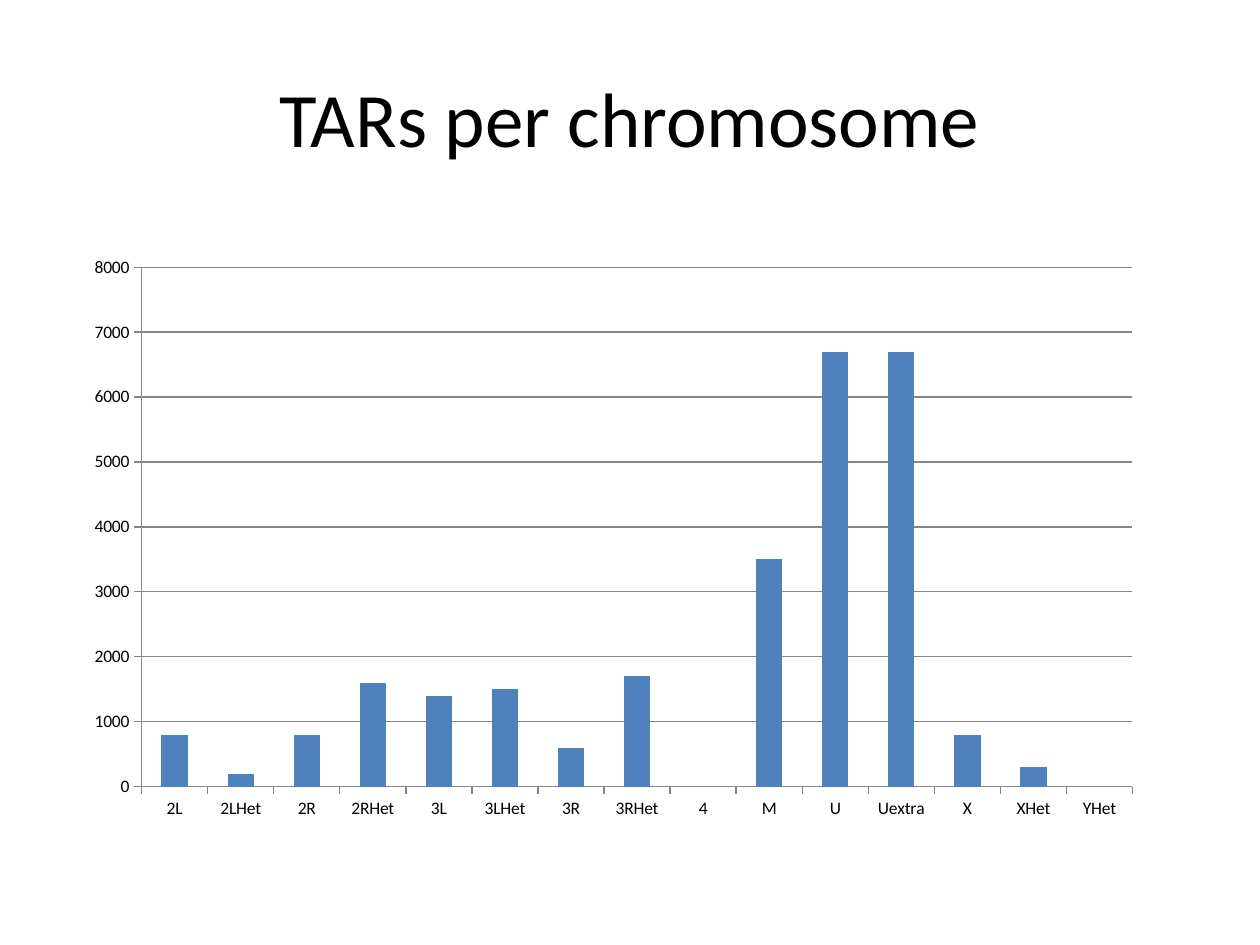
from pptx import Presentation
from pptx.chart.data import CategoryChartData
from pptx.dml.color import RGBColor
from pptx.enum.chart import XL_CHART_TYPE, XL_TICK_MARK
from pptx.enum.text import MSO_ANCHOR, PP_ALIGN
from pptx.util import Inches, Pt

COLUMNS = XL_CHART_TYPE.COLUMN_CLUSTERED
TICK_OUT = XL_TICK_MARK.OUTSIDE
TICK_NONE = XL_TICK_MARK.NONE
MIDDLE = MSO_ANCHOR.MIDDLE
CENTER = PP_ALIGN.CENTER

COLORS = {"text": "000000", "bar": "4F81BD", "axis": "868686"}

TARS = {
    "2L": 800, "2LHet": 200, "2R": 800, "2RHet": 1600, "3L": 1400,
    "3LHet": 1500, "3R": 600, "3RHet": 1700, "4": 0, "M": 3500,
    "U": 6700, "Uextra": 6700, "X": 800, "XHet": 300, "YHet": 0,
}


def set_all(target, values):
    for name, value in values.items():
        setattr(target, name, value)


class SlideBuilder:
    """Holds the style and the current slide."""

    font_name = "Calibri"

    def __init__(self, page):
        self.page = page

    def color(self, name):
        return RGBColor.from_string(COLORS[name])

    def style_font(self, font, size):
        set_all(font, {"name": self.font_name, "size": Pt(size), "bold": False})
        font.color.rgb = self.color("text")

    def style_line(self, line):
        line.color.rgb = self.color("axis")
        line.width = Pt(0.75)

    def title(self, text, left, top, width, height):
        box = self.page.shapes.add_textbox(
            Inches(left), Inches(top), Inches(width), Inches(height))
        frame = box.text_frame
        set_all(frame, {"word_wrap": True, "vertical_anchor": MIDDLE})
        para = frame.paragraphs[0]
        para.alignment = CENTER
        span = para.add_run()
        span.text = text
        self.style_font(span.font, 44)

    def column_chart(self, name, values, left, top, width, height):
        data = CategoryChartData()
        data.categories = list(values)
        data.add_series(name, list(values.values()))
        chart = self.page.shapes.add_chart(
            COLUMNS, Inches(left), Inches(top), Inches(width), Inches(height),
            data).chart
        set_all(chart, {"has_legend": False, "has_title": False})
        self.style_font(chart.font, 10)

        # Bars
        plot = chart.plots[0]
        set_all(plot, {"gap_width": 150, "vary_by_categories": False})
        fill = plot.series[0].format.fill
        fill.solid()
        fill.fore_color.rgb = self.color("bar")

        # Axes and gridlines
        for axis in (chart.category_axis, chart.value_axis):
            set_all(axis, {"major_tick_mark": TICK_OUT, "minor_tick_mark": TICK_NONE})
            self.style_line(axis.format.line)
        scale = chart.value_axis
        set_all(scale, {"minimum_scale": 0, "maximum_scale": 8000,
                        "major_unit": 1000, "has_major_gridlines": True})
        self.style_line(scale.major_gridlines.format.line)


def main():
    deck = Presentation()
    set_all(deck, {"slide_width": Inches(10), "slide_height": Inches(7.5)})
    builder = SlideBuilder(deck.slides.add_slide(deck.slide_layouts[6]))

    # Heading
    builder.title("TARs per chromosome", 0.5, 0.3, 9, 1.25)

    # TAR counts by chromosome
    builder.column_chart("Series 1", TARS, 0.58, 1.95, 8.58, 4.64)

    deck.save("out.pptx")


if __name__ == "__main__":
    main()
